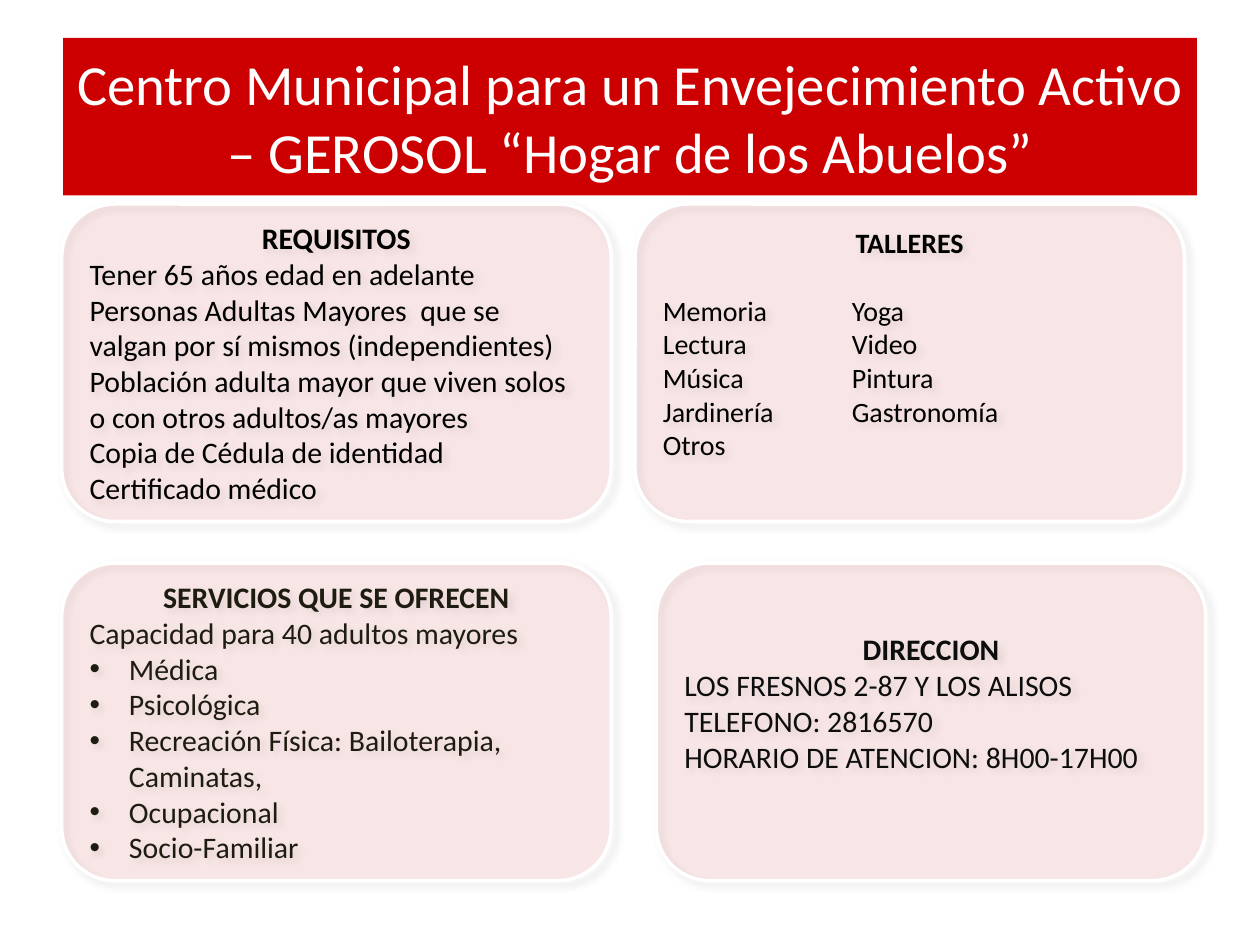
from lxml import etree
from pptx import Presentation
from pptx import util as u
from pptx.dml.color import RGBColor
from pptx.enum import shapes, text
from pptx.oxml import ns

Pt = u.Pt
RED = RGBColor(0xCC, 0x00, 0x00)
TINT = RGBColor(0xCC, 0x0C, 0x06)
WHITE = RGBColor(0xFF, 0xFF, 0xFF)
BLACK = RGBColor(0x00, 0x00, 0x00)
BROWN = RGBColor(0x1E, 0x1C, 0x11)
CHARCOAL = RGBColor(0x0D, 0x0D, 0x0D)
SHADOW = RGBColor(0xBF, 0xBF, 0xBF)

CARD_WIDTH, CARD_HEIGHT = 313.9, 181.4
LEFT, TOP_ROW, BOTTOM_ROW = 35.3, 116.6, 321.8
BULLET_INDENT = 22.5
RAISED_INSET = 25.6


def add_xml(parent, tag, **attributes):
    return etree.SubElement(parent, ns.qn(tag), **attributes)


class Composer:
    font = "Calibri"

    def __init__(self, page):
        self.page = page

    def add_span(self, para, words, size, color, bold=False):
        span = para.add_run()
        span.text = words
        span.font.name = self.font
        span.font.size = Pt(size)
        span.font.bold = bold
        span.font.color.rgb = color

    def title(self, words, left, top, width, height):
        box = self.page.shapes.title
        box.left, box.top, box.width, box.height = map(Pt, (left, top, width, height))
        box.fill.solid()
        box.fill.fore_color.rgb = RED
        frame = box.text_frame
        frame.auto_size = text.MSO_AUTO_SIZE.NONE
        frame.vertical_anchor = text.MSO_ANCHOR.MIDDLE
        para = frame.paragraphs[0]
        para.alignment = text.PP_ALIGN.CENTER
        self.add_span(para, words, 32.4, WHITE)

    def bullet(self, para):
        props = para._p.get_or_add_pPr()
        props.set("marL", str(Pt(BULLET_INDENT)))
        props.set("indent", str(-Pt(BULLET_INDENT)))
        add_xml(props, "a:buFont", typeface="Arial")
        add_xml(props, "a:buChar", char="•")

    def card(self, left, top):
        box = self.page.shapes.add_shape(
            shapes.MSO_SHAPE.ROUNDED_RECTANGLE,
            Pt(left), Pt(top), Pt(CARD_WIDTH), Pt(CARD_HEIGHT))
        box.fill.solid()
        box.fill.fore_color.rgb = TINT
        tint = box._element.spPr.find(ns.qn("a:solidFill"))[0]
        add_xml(tint, "a:alpha", val="9000")
        box.line.color.rgb = WHITE
        box.line.width = Pt(2)
        box.shadow.inherit = False
        effects = box._element.spPr.find(ns.qn("a:effectLst"))
        shadow = add_xml(effects, "a:outerShdw", blurRad=str(Pt(4)), dist=str(Pt(3)),
                         dir=str(45 * 60000), algn="tl", rotWithShape="0")
        shade = add_xml(shadow, "a:srgbClr", val=str(SHADOW))
        add_xml(shade, "a:alpha", val="40000")
        return box

    def info_card(self, left, top, heading, lines, color, size=17,
                  bullets=(), gap=0, bottom_inset=3.6):
        frame = self.card(left, top).text_frame
        frame.word_wrap = True
        frame.vertical_anchor = text.MSO_ANCHOR.MIDDLE
        frame.margin_bottom = Pt(bottom_inset)
        para = frame.paragraphs[0]
        para.alignment = text.PP_ALIGN.CENTER
        para.space_after = Pt(gap)
        self.add_span(para, heading, size, color, bold=True)
        for words in (*lines, *bullets):
            para = frame.add_paragraph()
            para.alignment = text.PP_ALIGN.LEFT
            if words in bullets:
                self.bullet(para)
            self.add_span(para, words, size, color)


def main():
    deck = Presentation()
    deck.slide_width, deck.slide_height = Pt(720), Pt(540)
    composer = Composer(deck.slides.add_slide(deck.slide_layouts[5]))

    composer.title("Centro Municipal para un Envejecimiento Activo "
                   "– GEROSOL “Hogar de los Abuelos”", 36, 21.6, 648, 90)
    composer.info_card(LEFT, TOP_ROW, "REQUISITOS", [
        "Tener 65 años edad en adelante",
        "Personas Adultas Mayores  que se valgan por sí mismos (independientes)",
        "Población adulta mayor que viven solos o con otros adultos/as mayores",
        "Copia de Cédula de identidad",
        "Certificado médico",
    ], BLACK)
    composer.info_card(362.9, TOP_ROW, "TALLERES", [
        "Memoria\t\tYoga",
        "Lectura\t\tVideo",
        "Música\t\tPintura",
        "Jardinería\t\tGastronomía",
        "Otros",
    ], BLACK, size=16, gap=19.5, bottom_inset=RAISED_INSET)
    composer.info_card(LEFT, BOTTOM_ROW, "SERVICIOS QUE SE OFRECEN",
                       ["Capacidad para 40 adultos mayores"], BROWN, bullets=[
                           "Médica",
                           "Psicológica",
                           "Recreación Física: Bailoterapia, Caminatas,",
                           "Ocupacional",
                           "Socio-Familiar",
                       ])
    composer.info_card(375.1, BOTTOM_ROW, "DIRECCION", [
        "LOS FRESNOS 2-87 Y LOS ALISOS",
        "TELEFONO: 2816570",
        "HORARIO DE ATENCION: 8H00-17H00",
    ], CHARCOAL, bottom_inset=RAISED_INSET)

    deck.save("out.pptx")


if __name__ == "__main__":
    main()
